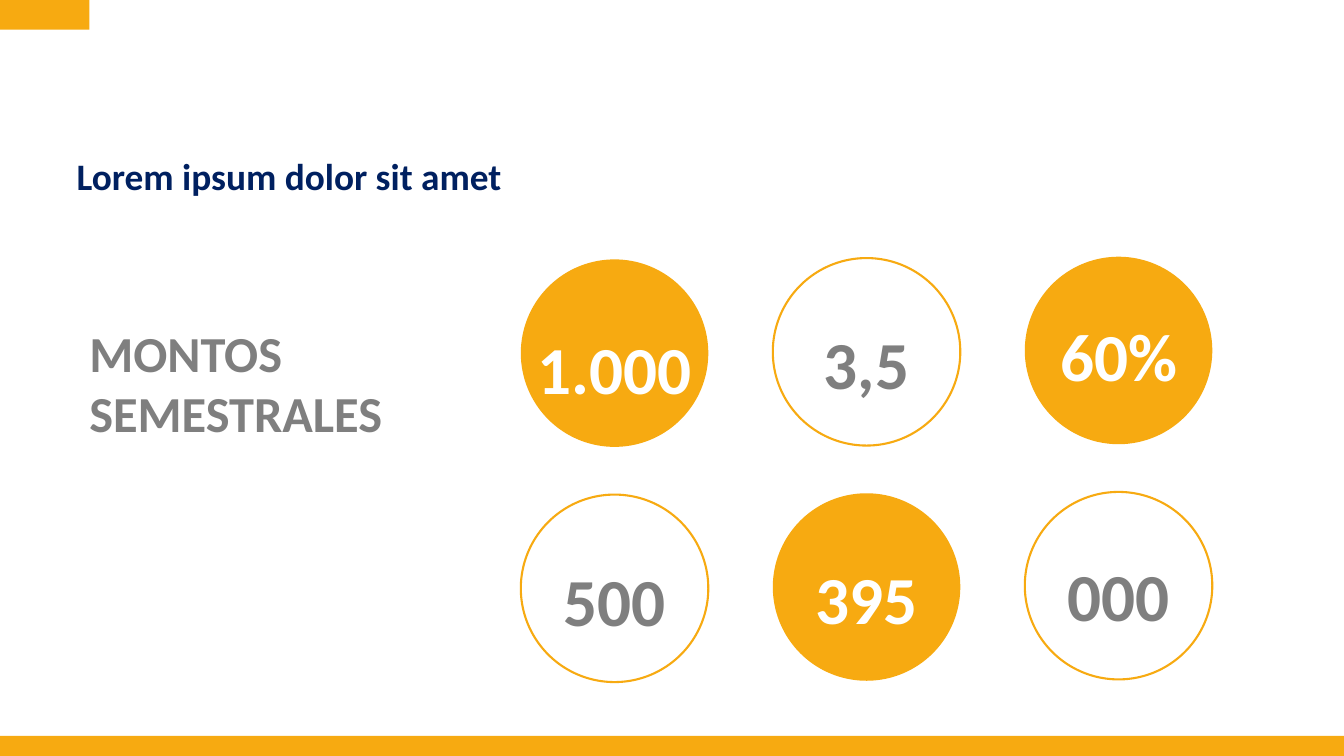
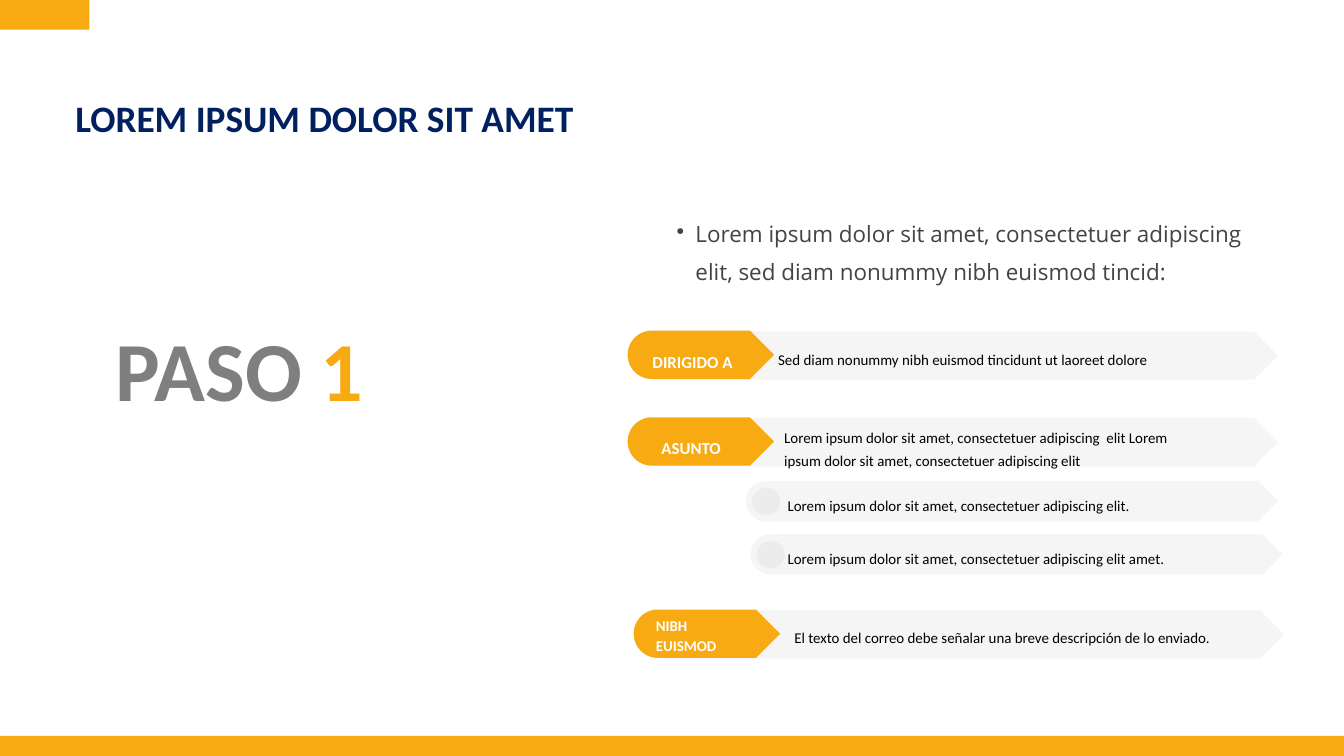
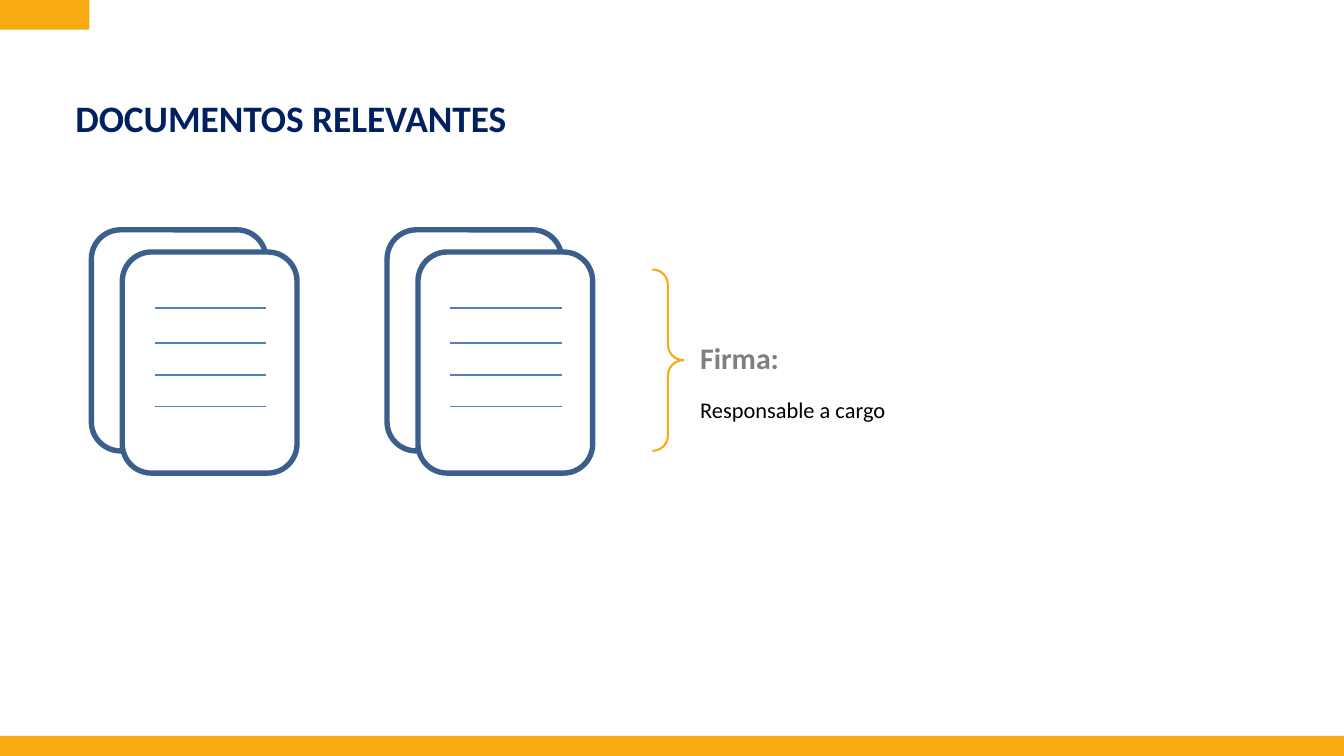
import math
from dataclasses import dataclass

import lxml.etree
import pptx
import pptx.dml.color
import pptx.enum.shapes
import pptx.enum.text
import pptx.oxml.ns
import pptx.util

Inches = pptx.util.Inches
Kind = pptx.enum.shapes.MSO_SHAPE
Align = pptx.enum.text.PP_ALIGN
qn = pptx.oxml.ns.qn


@dataclass(frozen=True)
class Theme:
    gold: str = "F7AA11"
    navy: str = "002060"
    gray: str = "7F7F7F"
    dark: str = "434343"
    shade: str = "191919"
    black: str = "000000"
    white: str = "FFFFFF"
    steel: str = "3A5F8C"
    blue: str = "4F81BD"
    font: str = "Calibri"
    body: str = "Open Sans"
    step: float = 90
    figure: float = 72
    head: float = 54
    title: float = 40
    sign: float = 32
    lead: float = 24
    label: float = 18
    small: float = 16


T = Theme()
WIDE, HIGH = 20, 11.25


def rgb(color):
    return pptx.dml.color.RGBColor.from_string(color)


def style(run, size, color, bold=False, font=T.font):
    run.font.name = font
    run.font.size = pptx.util.Pt(size)
    run.font.bold = bold
    run.font.color.rgb = rgb(color)


def fill_text(shape, text, size, color, bold=False, font=T.font,
              align=Align.LEFT, space=1.0, inset=(0, 0)):
    frame = shape.text_frame
    frame.word_wrap = True
    frame.auto_size = pptx.enum.text.MSO_AUTO_SIZE.SHAPE_TO_FIT_TEXT
    frame.vertical_anchor = pptx.enum.text.MSO_ANCHOR.TOP
    frame.margin_left = frame.margin_right = Inches(inset[0])
    frame.margin_top = frame.margin_bottom = Inches(inset[1])
    frame.text = text
    for para in frame.paragraphs:
        para.alignment = align
        para.line_spacing = space
        for run in para.runs:
            style(run, size, color, bold, font)
    return frame


def add_text(slide, box, text, size, color, **look):
    shape = slide.shapes.add_textbox(*map(Inches, box))
    return fill_text(shape, text, size, color, **look)


def paint(shape, fill=None, line=None, width=2.25, alpha=None):
    shape.shadow.inherit = False
    if fill:
        shape.fill.solid()
        shape.fill.fore_color.rgb = rgb(fill)
    else:
        shape.fill.background()
    if line:
        shape.line.color.rgb = rgb(line)
        shape.line.width = pptx.util.Pt(width)
    else:
        shape.line.fill.background()
    if alpha:
        tone = shape._element.spPr.find(qn("a:solidFill"))[0]
        lxml.etree.SubElement(tone, qn("a:alpha"), val=str(alpha * 1000))


def add_shape(slide, kind, box, **look):
    shape = slide.shapes.add_shape(kind, *map(Inches, box))
    paint(shape, **look)
    return shape


def add_rule(slide, left, top, width):
    line = slide.shapes.add_connector(
        pptx.enum.shapes.MSO_CONNECTOR.STRAIGHT,
        *map(Inches, (left, top, left + width, top)))
    line.line.color.rgb = rgb(T.blue)
    line.line.width = 0
    lxml.etree.SubElement(line._element.spPr, qn("a:effectLst"))


def add_pill(slide, box, **look):
    """Bar with a round left end and a pointed right end."""
    left, top, width, height = box
    half = height / 2
    neck, middle = left + width - half, top + half
    points = [(neck, top)]
    for turn in range(90, 271, 6):
        angle = math.radians(turn)
        points.append((left + half + half * math.cos(angle),
                       middle - half * math.sin(angle)))
    points += [(neck, top + height), (left + width, middle)]
    points = [(Inches(x), Inches(y)) for x, y in points]
    form = slide.shapes.build_freeform(*points[0])
    form.add_line_segments(points[1:], close=True)
    paint(form.convert_to_shape(), **look)


def start(deck, title, left=1.12, top=1.28):
    """New slide with its title and the gold bands."""
    slide = deck.slides.add_slide(deck.slide_layouts[5])
    head = slide.shapes.title
    head.left, head.top, head.width, head.height = map(
        Inches, (left, top, 10.21, 0.67))
    fill_text(head, title, T.title, T.navy, bold=True, space=1.21)
    add_shape(slide, Kind.RECTANGLE, (0, HIGH - 0.3, WIDE, 0.3), fill=T.gold)
    add_shape(slide, Kind.RECTANGLE, (0, 0, 1.33, 0.44), fill=T.gold)
    return slide


def add_disc(slide, left, top, figure, drop, width, solid):
    size = 2.79
    look = {"fill": T.gold} if solid else {"line": T.gold}
    add_shape(slide, Kind.OVAL, (left, top, size, size), **look)
    box = (left + (size - width) / 2, top + drop, width, 1.7)
    add_text(slide, box, figure, T.figure, T.white if solid else T.gray,
             bold=True, align=Align.CENTER, space=1.4)


def amounts(deck):
    slide = start(deck, "Lorem ipsum dolor sit amet", 1.14, 2.14)
    add_text(slide, (1.33, 4.79, 4.63, 1.82), "MONTOS\nSEMESTRALES",
             T.head, T.gray, bold=True)
    # figure, drop of the text below the disc's top, width of the text
    discs = [
        [("1.000", 0.53, 3.46), ("3,5", 0.48, 3.09), ("60%", 0.37, 2.79)],
        [("500", 0.48, 2.79), ("395", 0.48, 2.79), ("000", 0.45, 2.79)],
    ]
    for row, line in enumerate(discs):
        for col, (figure, drop, width) in enumerate(line):
            add_disc(slide, 7.75 + 3.75 * col, 3.86 + 3.5 * row - 0.02 * col,
                     figure, drop, width, solid=(row + col) % 2 == 0)


def add_field(slide, left, top, label, spot, look, text, place):
    """Grey bar with a gold tag; spot and place are relative to the bar."""
    add_pill(slide, (left, top, 9.58, 0.72), fill=T.shade, alpha=4)
    add_pill(slide, (left - 0.1, top - 0.01, 2.18, 0.72), fill=T.gold)
    for (x, y, w, h), words, form in (
            (spot, label, dict(color=T.white, bold=True, **look)),
            (place, text, dict(size=T.small, color=T.black, space=1.31))):
        add_text(slide, (left + x, top + y, w, h), words, **form)


def add_note(slide, left, top, text, inner):
    add_pill(slide, (left, top, 7.92, 0.6), fill=T.shade, alpha=4)
    add_shape(slide, Kind.OVAL, (left + 0.09, top + 0.1, 0.42, 0.41),
              fill=T.shade, alpha=4)
    add_text(slide, (left + inner, top + 0.14, 7.87, 0.28), text,
             T.small, T.black, space=1.31)


def add_bullet(para, left, hang, color):
    props = para._p.get_or_add_pPr()
    props.set("marL", str(Inches(left)))
    props.set("indent", str(-Inches(hang)))
    tint = lxml.etree.SubElement(props, qn("a:buClr"))
    lxml.etree.SubElement(tint, qn("a:srgbClr"), val=color)
    lxml.etree.SubElement(props, qn("a:buChar"), char="•")


def steps(deck):
    slide = start(deck, "LOREM IPSUM DOLOR SIT AMET")
    lead = add_text(
        slide, (9.78, 3.12, 8.94, 1.53),
        "Lorem ipsum dolor sit amet, consectetuer adipiscing elit, "
        "sed diam nonummy nibh euismod tincid:",
        T.lead, T.dark, font=T.body, space=1.4)
    add_bullet(lead.paragraphs[0], 0.57, 0.28, T.dark)
    step = add_text(slide, (1.33, 4.13, 4.47, 2.12), "PASO ", T.step, T.gray,
                    bold=True, align=Align.CENTER, space=1.4)
    count = step.paragraphs[0].add_run()
    count.text = "1"
    style(count, T.step, T.gold, bold=True)

    tag = dict(size=T.label, align=Align.CENTER, space=1.4)
    fields = [
        (9.44, 4.93, "DIRIGIDO A", (0.13, 0.18, 1.47, 0.33), tag,
         "Sed diam nonummy nibh euismod tincidunt ut laoreet dolore",
         (2.14, 0.2, 7.13, 0.28)),
        (9.44, 6.22, "ASUNTO", (0.32, 0.18, 1.05, 0.33), tag,
         "Lorem ipsum dolor sit amet, consectetuer adipiscing  elit "
         "Lorem ipsum dolor sit amet, consectetuer adipiscing elit",
         (2.23, 0.07, 6.29, 0.57)),
        (9.53, 9.08, "NIBH EUISMOD", (0.23, 0.07, 1.18, 0.5),
         dict(size=T.small, space=1.11),
         "El texto del correo debe señalar una breve descripción "
         "de lo enviado.", (2.29, 0.19, 7.92, 0.28)),
    ]
    for field in fields:
        add_field(slide, *field)
    add_note(slide, 11.1, 7.16,
             "Lorem ipsum dolor sit amet, consectetuer adipiscing elit.", 0.62)
    add_note(slide, 11.17, 7.95,
             "Lorem ipsum dolor sit amet, consectetuer adipiscing elit amet.",
             0.55)


def add_papers(slide, left, top):
    for right, down, fill in ((0, 0, None), (0.46, 0.33, T.white)):
        add_shape(slide, Kind.ROUNDED_RECTANGLE,
                  (left + right, top + down, 2.6, 3.29),
                  fill=fill, line=T.steel, width=5.75)
    for down in (1.17, 1.69, 2.16, 2.63):
        add_rule(slide, left + 0.94, top + down, 1.66)


def papers(deck):
    slide = start(deck, "DOCUMENTOS RELEVANTES")
    for left in (1.36, 5.76):
        add_papers(slide, left, 3.42)
    brace = add_shape(slide, Kind.RIGHT_BRACE, (9.71, 4.01, 0.46, 2.7),
                      line=T.gold)
    brace.adjustments[0] = brace.adjustments[1] = 0.5
    frame = add_text(slide, (10.32, 5, 3.08, 1.35),
                     "Firma:\nResponsable a cargo", T.sign, T.gray,
                     bold=True, inset=(0.1, 0.05))
    role = frame.paragraphs[1]
    role.space_before = pptx.util.Pt(22)
    style(role.runs[0], T.lead, T.black)


def main():
    deck = pptx.Presentation()
    deck.slide_width, deck.slide_height = Inches(WIDE), Inches(HIGH)
    amounts(deck)
    steps(deck)
    papers(deck)
    deck.save("out.pptx")


if __name__ == "__main__":
    main()
